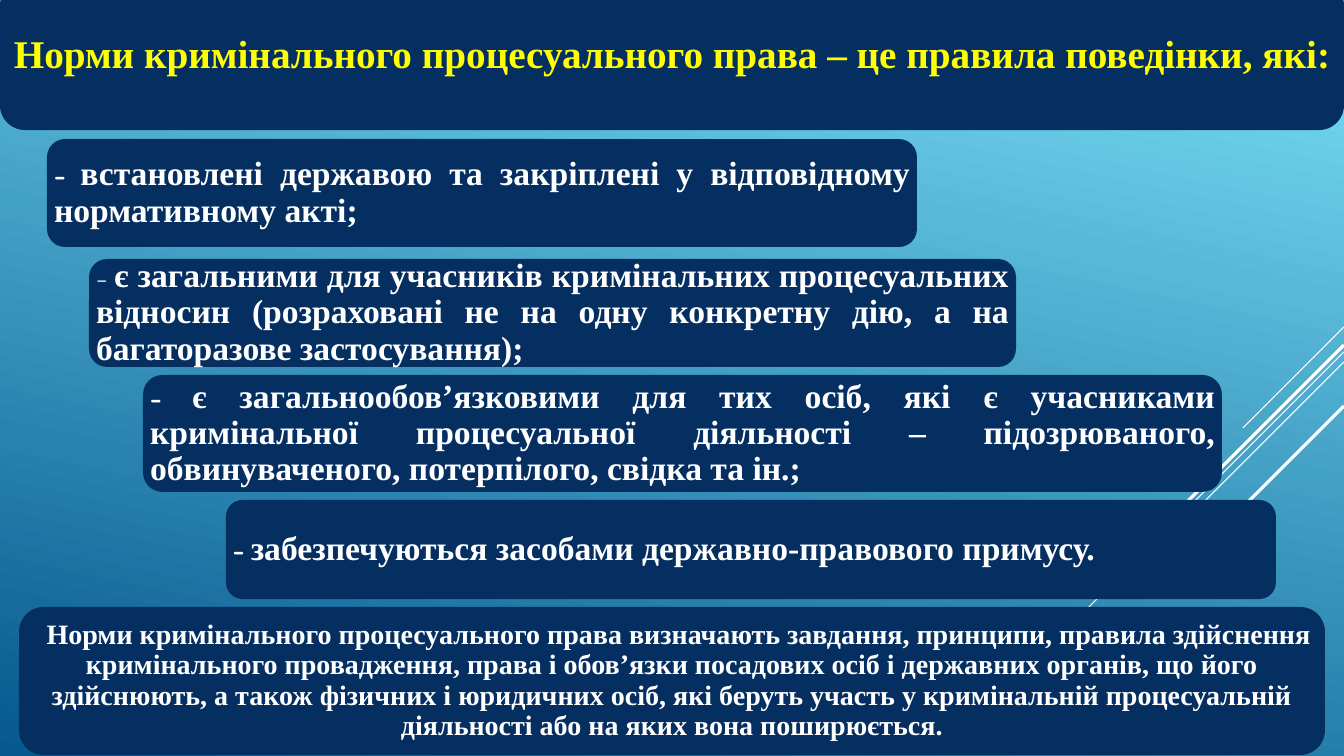
from pptx import Presentation
from pptx import util as u
from pptx.dml.color import RGBColor
from pptx.enum import shapes, text
from pptx.oxml.ns import qn
from lxml import etree

WIDTH, HEIGHT = 1344, 756
EMU_PER_PX = 12192000 / WIDTH
CORNER = 0.16667
NAVY, WHITE, YELLOW = "052F61", "FFFFFF", "FFFF00"
SERIF, SANS = "Times New Roman", "Quicksand"

TITLE = "Норми кримінального процесуального права – це правила поведінки, які:"
SUMMARY = (
    "Норми кримінального процесуального права визначають завдання, принципи, "
    "правила здійснення кримінального провадження, права і обов’язки посадових "
    "осіб і державних органів, що його здійснюють, а також фізичних і юридичних "
    "осіб, які беруть участь у кримінальній процесуальній діяльності або на яких "
    "вона поширюється."
)
# left, top, width, height, bold dash, wording
RULES = [
    (47, 139, 870, 108, True,
     "встановлені державою та закріплені у відповідному нормативному акті;"),
    (89, 259, 927, 108, False,
     "є загальними для учасників кримінальних процесуальних відносин "
     "(розраховані не на одну конкретну дію, а на багаторазове застосування);"),
    (143, 375, 1079, 117, True,
     "є загальнообов’язковими для тих осіб, які є учасниками кримінальної "
     "процесуальної діяльності – підозрюваного, обвинуваченого, потерпілого, "
     "свідка та ін.;"),
    (226, 500, 1050, 99, True,
     "забезпечуються засобами державно-правового примусу."),
]
# top at the right edge, horizontal reach, line width
RAYS = [(327, 101, 0.75), (352, 329, 0.75), (362, 209, 0.75),
        (345, 193, 2.25), (406, 140, 2.25)]


def px(length):
    return u.Emu(round(length * EMU_PER_PX))


def color(value):
    return RGBColor.from_string(value)


def paint_background(slide):
    fill = slide.background.fill
    fill.gradient()
    fill.gradient_angle = 258
    for stop, position, value in zip(fill.gradient_stops, (0.1, 1), ("6ED2EB", "06588E")):
        stop.position = position
        stop.color.rgb = color(value)


def add_ray(slide, top, reach, width):
    """Draw a 45° line down and left from the right edge."""
    ray = slide.shapes.add_connector(
        shapes.MSO_CONNECTOR.STRAIGHT,
        px(WIDTH), px(top), px(WIDTH - reach), px(top + reach))
    ray.line.color.rgb = color(WHITE)
    ray.line.width = u.Pt(width)
    etree.SubElement(ray._element.spPr, qn("a:effectLst"))


def add_panel(slide, left, top, width, height, margin, alignment):
    """Add a rounded panel and return its paragraph; margin is from the panel's edge."""
    panel = slide.shapes.add_shape(
        shapes.MSO_SHAPE.ROUNDED_RECTANGLE, px(left), px(top), px(width), px(height))
    panel.adjustments[0] = CORNER
    panel.shadow.inherit = False
    panel.fill.solid()
    panel.fill.fore_color.rgb = color(NAVY)
    panel.line.fill.background()

    frame = panel.text_frame
    frame.word_wrap = True
    frame.vertical_anchor = text.MSO_ANCHOR.MIDDLE
    # The preset already insets its text by 0.29 of the corner radius.
    inset = px(max(0, margin - 0.29 * CORNER * height))
    frame.margin_left = frame.margin_right = inset
    frame.margin_top = frame.margin_bottom = inset
    paragraph = frame.paragraphs[0]
    paragraph.alignment = alignment
    paragraph.line_spacing = 0.9
    return paragraph


def set_font(font, name, size, value, bold=True):
    font.name = name
    font.size = u.Pt(size)
    font.color.rgb = color(value)
    font.bold = bold


def add_statement(slide, box, margin, wording, size, value, indent=0):
    paragraph = add_panel(slide, *box, margin, text.PP_ALIGN.CENTER)
    paragraph.add_run().text = wording
    set_font(paragraph.font, SERIF, size, value)
    if indent:
        paragraph._p.get_or_add_pPr().set("indent", str(px(indent)))


def add_rule(slide, left, top, width, height, bold_dash, wording):
    paragraph = add_panel(slide, left, top, width, height, 7, text.PP_ALIGN.JUSTIFY)
    dash, body = paragraph.add_run(), paragraph.add_run()
    dash.text, body.text = "– ", wording
    set_font(dash.font, SANS, 16, WHITE, bold_dash)
    set_font(body.font, SERIF, 24, WHITE)


def main():
    presentation = Presentation()
    presentation.slide_width, presentation.slide_height = px(WIDTH), px(HEIGHT)
    slide = presentation.slides.add_slide(presentation.slide_layouts[6])
    paint_background(slide)
    for ray in RAYS:
        add_ray(slide, *ray)
    add_statement(slide, (0, -19, 1344, 149), 10, TITLE, 28, YELLOW)
    for rule in RULES:
        add_rule(slide, *rule)
    add_statement(slide, (19, 607, 1306, 148), 8, SUMMARY, 20, WHITE, indent=14)
    presentation.save("out.pptx")


if __name__ == "__main__":
    main()
